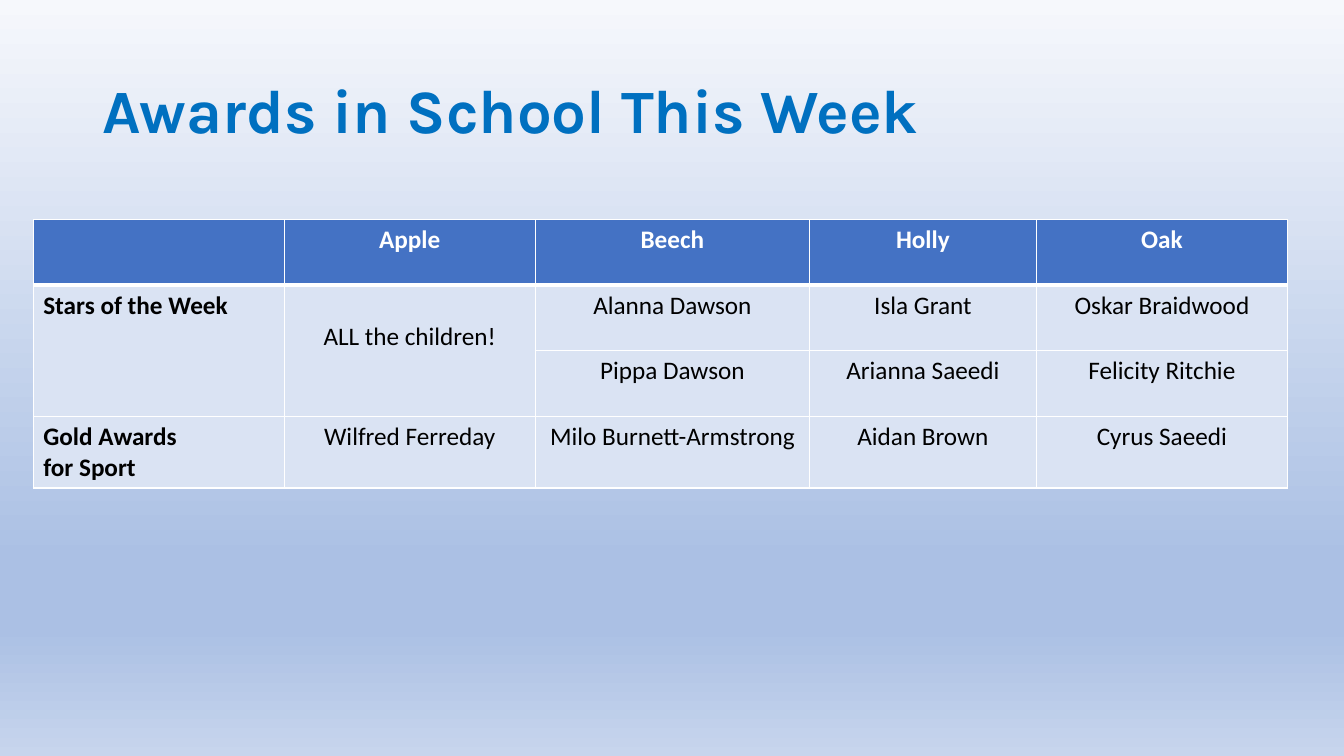
from lxml import etree
from pptx import Presentation
from pptx.dml.color import RGBColor
from pptx.enum.text import MSO_ANCHOR, MSO_AUTO_SIZE, PP_ALIGN
from pptx.oxml.ns import qn
from pptx.util import Inches, Pt

LEFT, CENTER = PP_ALIGN.LEFT, PP_ALIGN.CENTER
MIDDLE = MSO_ANCHOR.MIDDLE
NO_FIT = MSO_AUTO_SIZE.NONE

BLUE, PALE, WHITE, BLACK = "4472C4", "DAE3F3", "FFFFFF", "000000"
SKY = [(0, "F6F8FC"), (74, "ABC0E4"), (83, "ABC0E4"), (100, "C7D5ED")]

WIDTHS = [2.49, 2.49, 2.72, 2.25, 2.49]
HIGH = 0.65
AWARDS = [
    ["", "Apple", "Beech", "Holly", "Oak"],
    ["Stars of the Week", "ALL the children!", "Alanna Dawson",
     "Isla Grant", "Oskar Braidwood"],
    ["", "", "Pippa Dawson", "Arianna Saeedi", "Felicity Ritchie"],
    ["Gold Awards\nfor Sport", "Wilfred Ferreday", "Milo Burnett-Armstrong",
     "Aidan Brown", "Cyrus Saeedi"],
]


def color(code):
    return RGBColor.from_string(code)


def style(item, form):
    for name, value in form.items():
        setattr(item, name, value)


def write(frame, text, form, font, tint):
    """Fill a text frame, one paragraph per line of text."""
    frame.text = text
    for para in frame.paragraphs:
        style(para, form)
        style(para.font, font)
        for run in para.runs:
            style(run.font, font)
            run.font.color.rgb = color(tint)


def add_sky(slide):
    """Shade the background from top to bottom."""
    fill = slide.background.fill
    fill.gradient()
    fill.gradient_angle = 270
    stops = slide.background._cSld.find(".//" + qn("a:gsLst"))
    for stop in list(stops):
        stops.remove(stop)
    for place, code in SKY:
        stop = etree.SubElement(stops, qn("a:gs"), pos=str(place * 1000))
        etree.SubElement(stop, qn("a:srgbClr"), val=code)


def add_title(slide, left, top, width, height):
    title = slide.shapes.title
    style(title, dict(left=Inches(left), top=Inches(top),
                      width=Inches(width), height=Inches(height)))
    style(title.text_frame, dict(vertical_anchor=MIDDLE, word_wrap=True,
                                 auto_size=NO_FIT))
    write(title.text_frame, "Awards in School This Week",
          dict(alignment=LEFT, line_spacing=0.9),
          dict(name="Karla", size=Pt(44), bold=True), "0070C0")


def add_edges(cell, top, base):
    """Draw the white cell borders, given the top and bottom weights."""
    props = cell._tc.get_or_add_tcPr()
    for side, weight in zip("LRTB", (1, 1, top, base)):
        line = etree.SubElement(props, qn("a:ln" + side), w=str(Pt(weight)))
        fill = etree.SubElement(line, qn("a:solidFill"))
        etree.SubElement(fill, qn("a:srgbClr"), val=WHITE)


def add_awards(slide, left, top):
    rows, cols = len(AWARDS), len(WIDTHS)
    grid = slide.shapes.add_table(
        rows, cols, Inches(left), Inches(top),
        Inches(sum(WIDTHS)), Inches(HIGH * rows)).table
    for col, width in zip(grid.columns, WIDTHS):
        col.width = Inches(width)
    for r, names in enumerate(AWARDS):
        grid.rows[r].height = Inches(HIGH)
        for c, text in enumerate(names):
            cell, head = grid.cell(r, c), r == 0
            add_edges(cell, 3 if r == 1 else 1, 3 if head else 1)
            cell.fill.solid()
            cell.fill.fore_color.rgb = color(BLUE if head else PALE)
            write(cell.text_frame, text,
                  dict(alignment=CENTER if c else LEFT),
                  dict(name="Calibri", size=Pt(18), bold=head or c == 0),
                  WHITE if head else BLACK)
    # The first two columns share one cell over both star rows
    for c in range(2):
        grid.cell(1, c).merge(grid.cell(2, c))
    grid.cell(1, 1).margin_top = Inches(0.36)


def main():
    deck = Presentation()
    deck.slide_width, deck.slide_height = Inches(13.33), Inches(7.5)
    slide = deck.slides.add_slide(deck.slide_layouts[5])
    add_sky(slide)
    add_title(slide, 0.92, 0.4, 11.5, 1.45)
    add_awards(slide, 0.33, 2.18)
    deck.save("out.pptx")


if __name__ == "__main__":
    main()
